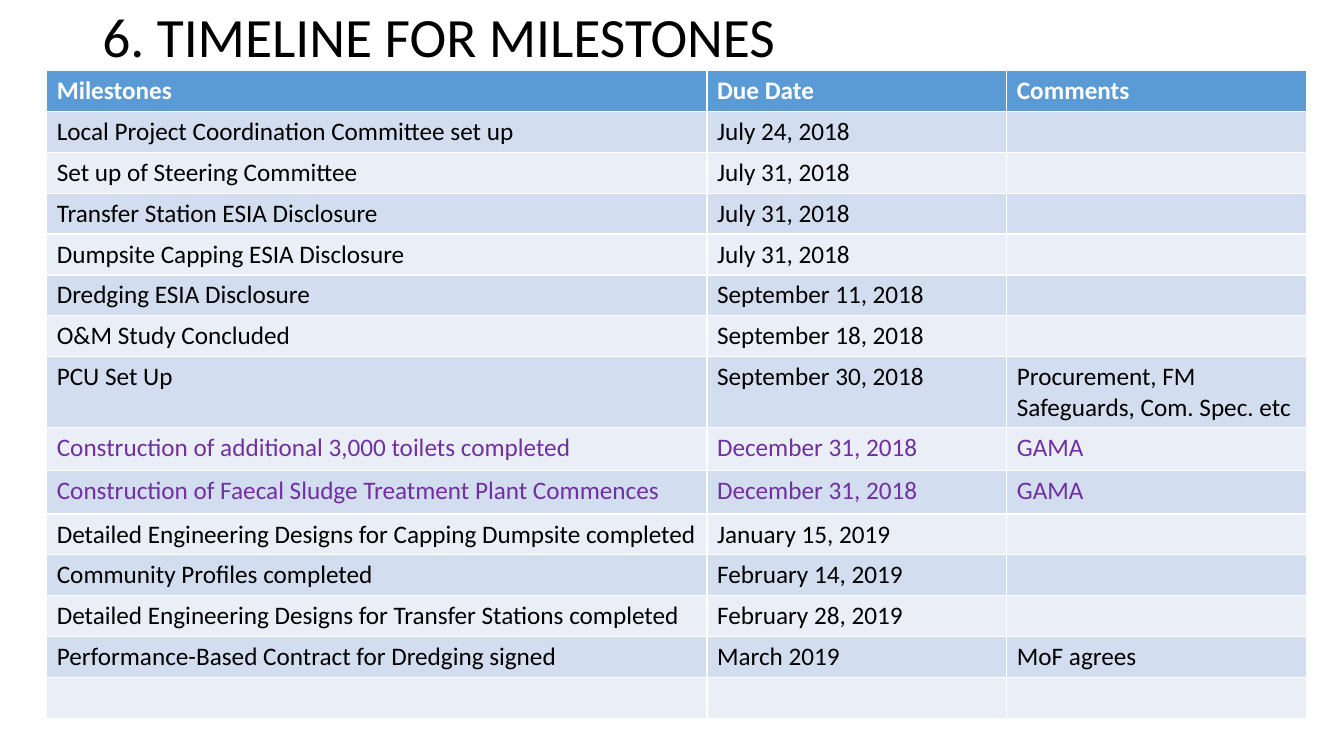
from pptx import Presentation
from pptx.dml.color import RGBColor
from pptx.enum.text import MSO_ANCHOR
from pptx.util import Pt

BLACK = RGBColor(0x00, 0x00, 0x00)
WHITE = RGBColor(0xFF, 0xFF, 0xFF)
PURPLE = RGBColor(0x70, 0x30, 0xA0)
HEADER_BLUE = RGBColor(0x5B, 0x9B, 0xD5)
BAND_DARK = RGBColor(0xD2, 0xDE, 0xEF)
BAND_LIGHT = RGBColor(0xEA, 0xEF, 0xF7)

FONT = "Calibri"
COLUMN_WIDTHS = [471.6, 214.2, 214.2]
ROW_HEIGHT = 29.2
HIGHLIGHT_HEIGHT = 30.96

MILESTONES = [
    ("Milestones", "Due Date", "Comments"),
    ("Local Project Coordination Committee set up", "July 24, 2018", ""),
    ("Set up of Steering Committee", "July 31, 2018", ""),
    ("Transfer Station ESIA Disclosure", "July 31, 2018", ""),
    ("Dumpsite Capping ESIA Disclosure", "July 31, 2018", ""),
    ("Dredging ESIA Disclosure", "September 11, 2018", ""),
    ("O&M Study Concluded", "September 18, 2018", ""),
    ("PCU Set Up", "September 30, 2018", "Procurement, FM Safeguards, Com. Spec. etc"),
    ("Construction of additional 3,000 toilets completed", "December 31, 2018", "GAMA"),
    ("Construction of Faecal Sludge Treatment Plant Commences", "December 31, 2018", "GAMA"),
    ("Detailed Engineering Designs for Capping Dumpsite completed", "January 15, 2019", ""),
    ("Community Profiles completed", "February 14, 2019", ""),
    ("Detailed Engineering Designs for Transfer Stations completed", "February 28, 2019", ""),
    ("Performance-Based Contract for Dredging signed", "March 2019", "MoF agrees"),
    ("", "", ""),
]


def add_run(paragraph, text, size, color, bold=False):
    run = paragraph.add_run()
    run.text = text
    run.font.name = FONT
    run.font.size = Pt(size)
    run.font.bold = bold
    run.font.color.rgb = color


presentation = Presentation()
presentation.slide_width = Pt(960)
presentation.slide_height = Pt(540)
slide = presentation.slides.add_slide(presentation.slide_layouts[6])

title = slide.shapes.add_textbox(Pt(66), Pt(10), Pt(828), Pt(36))
title_frame = title.text_frame
title_frame.word_wrap = True
title_frame.vertical_anchor = MSO_ANCHOR.MIDDLE
title_paragraph = title_frame.paragraphs[0]
title_paragraph.line_spacing = 0.9
add_run(title_paragraph, "6. TIMELINE FOR MILESTONES", 39.6, BLACK)

table = slide.shapes.add_table(
    len(MILESTONES), len(COLUMN_WIDTHS),
    Pt(33.4), Pt(50.4), Pt(sum(COLUMN_WIDTHS)), Pt(ROW_HEIGHT * len(MILESTONES)),
).table
for column, width in zip(table.columns, COLUMN_WIDTHS):
    column.width = Pt(width)

for index, (row, texts) in enumerate(zip(table.rows, MILESTONES)):
    is_header = index == 0
    is_highlight = texts[2] == "GAMA"
    row.height = Pt(HIGHLIGHT_HEIGHT if is_highlight else ROW_HEIGHT)
    if is_header:
        fill_color, text_color = HEADER_BLUE, WHITE
    else:
        fill_color = BAND_DARK if index % 2 else BAND_LIGHT
        text_color = PURPLE if is_highlight else BLACK
    for cell, text in zip(row.cells, texts):
        cell.fill.solid()
        cell.fill.fore_color.rgb = fill_color
        paragraph = cell.text_frame.paragraphs[0]
        if text:
            add_run(paragraph, text, 18, text_color, is_header)
        else:
            paragraph.font.size = Pt(18)

presentation.save("out.pptx")
